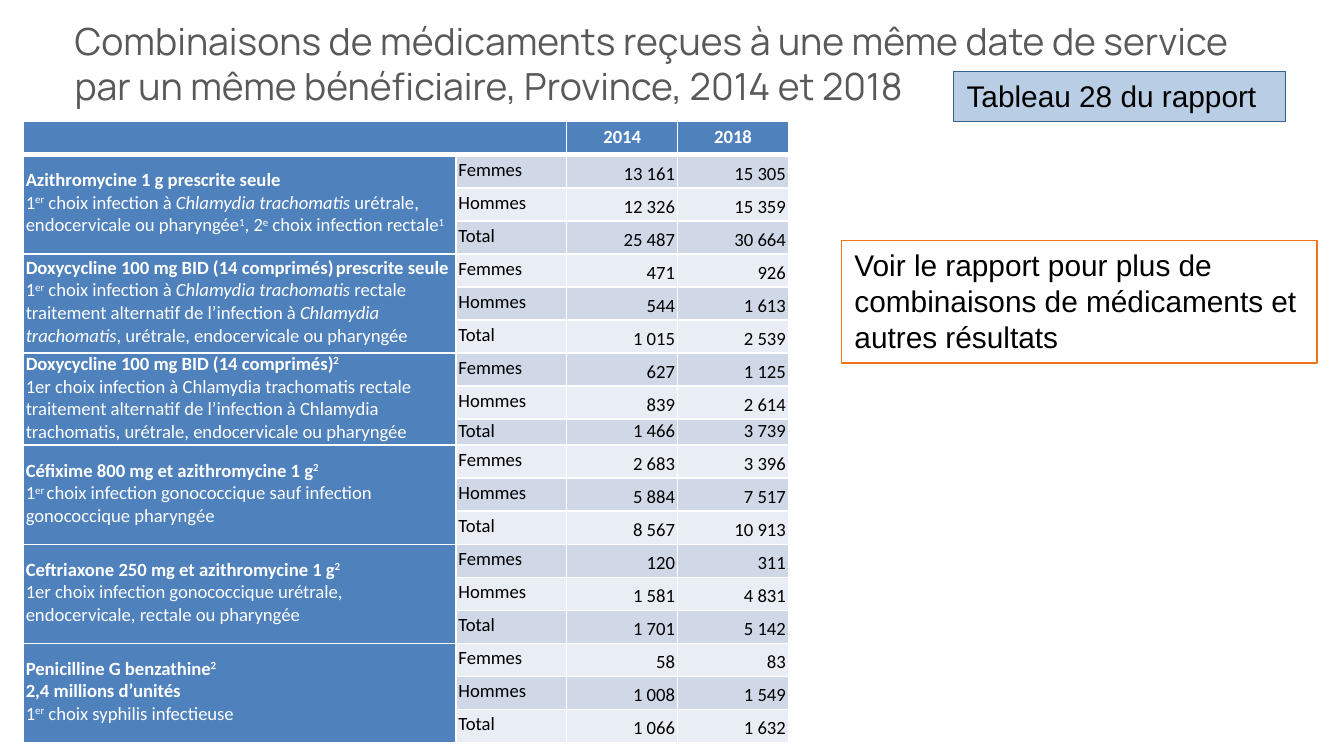
from lxml import etree
from pptx import Presentation, util as u
from pptx.dml.color import RGBColor
from pptx.enum import shapes, text
from pptx.oxml.ns import qn

WIDTH, HEIGHT = u.Inches(10), u.Inches(10 * 9 / 16)
BLUE, WHITE, BLACK = "4F81BD", "FFFFFF", "000000"
BANDS = ("D0D8E8", "E9EDF4")
GROUPS = ("Femmes", "Hommes", "Total")
YEARS = ("2014", "2018")
COLUMNS = (32.2, 8.25, 8.25, 8.25)
SHORT_ROW, SHORT_HEIGHT = 9, 3.4
FIXED_SPACE = chr(160)

TREATMENTS = [
    (["Azithromycine 1~g prescrite seule"],
     ["1^er^ choix infection à *Chlamydia trachomatis *urétrale, endocervicale ou "
      "pharyngée^1^, 2^e^ choix infection rectale^1^"],
     [(13161, 15305), (12326, 15359), (25487, 30664)]),
    (["Doxycycline 100~mg BID (14 comprimés)^ ^prescrite seule"],
     ["1^er^ choix infection à *Chlamydia trachomatis *rectale",
      "traitement alternatif de l’infection à *Chlamydia trachomatis*, urétrale, "
      "endocervicale ou pharyngée"],
     [(471, 926), (544, 1613), (1015, 2539)]),
    (["Doxycycline 100~mg BID (14 comprimés)^2^"],
     ["1er choix infection à Chlamydia trachomatis rectale",
      "traitement alternatif de l’infection à Chlamydia trachomatis, urétrale, "
      "endocervicale ou pharyngée"],
     [(627, 1125), (839, 2614), (1466, 3739)]),
    (["Céfixime 800~mg et azithromycine 1~g^2^"],
     ["1^er ^choix infection gonococcique sauf infection gonococcique pharyngée"],
     [(2683, 3396), (5884, 7517), (8567, 10913)]),
    (["Ceftriaxone 250~mg et azithromycine 1~g^2^"],
     ["1er choix infection gonococcique urétrale, endocervicale, rectale ou pharyngée"],
     [(120, 311), (1581, 4831), (1701, 5142)]),
    (["Penicilline G benzathine^2^", "2,4 millions d’unités"],
     ["1^er^ choix syphilis infectieuse"],
     [(58, 83), (1008, 1549), (1066, 1632)]),
]


def rgb(value):
    """Turn a hex string into a colour."""
    return RGBColor.from_string(value)


def across(share):
    """Length of a percentage of the slide's width."""
    return round(WIDTH * share / 100)


def down(share):
    """Length of a percentage of the slide's height."""
    return round(HEIGHT * share / 100)


def frame(box):
    """Turn a box in percentages into left, top, width and height."""
    left, top, width, height = box
    return across(left), down(top), across(width), down(height)


def write(holder, lines, size=10, font="Calibri", color=BLACK, bold_lines=0,
          align=text.PP_ALIGN.LEFT, after=0):
    """Write lines: ^ encloses superscripts, * italics, and ~ is a fixed space."""
    for index, line in enumerate(lines):
        paragraph = holder.paragraphs[0] if index == 0 else holder.add_paragraph()
        paragraph.alignment = align
        if after:
            paragraph.space_after = u.Pt(after)
        for raised, part in enumerate(line.replace("~", FIXED_SPACE).split("^")):
            for slanted, piece in enumerate(part.split("*")):
                if not piece:
                    continue
                run = paragraph.add_run()
                run.text = piece
                run.font.size, run.font.name = u.Pt(size), font
                run.font.color.rgb = rgb(color)
                run.font.bold = index < bold_lines
                run.font.italic = slanted % 2 == 1
                if raised % 2:
                    run.font._element.set("baseline", "30000")


def style_cell(cell, fill, lines=(), anchor=text.MSO_ANCHOR.MIDDLE, bottom=1, **look):
    """Give a table cell its borders, fill, margins and wording."""
    properties = cell._tc.get_or_add_tcPr()
    for side in "LRTB":
        points = bottom if side == "B" else 1
        line = etree.SubElement(properties, qn(f"a:ln{side}"), w=str(u.Pt(points)))
        solid = etree.SubElement(line, qn("a:solidFill"))
        etree.SubElement(solid, qn("a:srgbClr"), val=WHITE)
    cell.fill.solid()
    cell.fill.fore_color.rgb = rgb(fill)
    cell.margin_left = cell.margin_right = cell.margin_bottom = u.Inches(0.02)
    cell.margin_top = 0
    cell.vertical_anchor = anchor
    if lines:
        write(cell.text_frame, lines, **look)
    else:
        etree.SubElement(cell.text_frame.paragraphs[0]._p, qn("a:endParaRPr"), sz="1000")


def add_title(slide, box, wording):
    """Place and format the slide's title."""
    title = slide.shapes.title
    title.left, title.top, title.width, title.height = frame(box)
    holder = title.text_frame
    holder.word_wrap = True
    holder.auto_size = text.MSO_AUTO_SIZE.NONE
    holder.vertical_anchor = text.MSO_ANCHOR.MIDDLE
    write(holder, [wording], size=20, font="Manrope", color="595959")


def add_note(slide, box, wording, outline, fill=None):
    """Add a framed remark beside the table."""
    note = slide.shapes.add_shape(shapes.MSO_SHAPE.RECTANGLE, *frame(box))
    note.shadow.inherit = False
    if fill:
        note.fill.solid()
        note.fill.fore_color.rgb = rgb(fill)
    else:
        note.fill.background()
    note.line.color.rgb = rgb(outline)
    note.line.width = u.Pt(0.75)
    holder = note.text_frame
    holder.word_wrap = True
    holder.auto_size = text.MSO_AUTO_SIZE.SHAPE_TO_FIT_TEXT
    holder.vertical_anchor = text.MSO_ANCHOR.TOP
    write(holder, [wording], size=16, font="Arial")


def add_treatment_table(slide, box):
    """Add the table of treatments by group and year."""
    count = 1 + len(TREATMENTS) * len(GROUPS)
    table = slide.shapes.add_table(count, len(COLUMNS), *frame(box)).table
    table.first_row = table.horz_banding = False
    for column, share in zip(table.columns, COLUMNS):
        column.width = across(share)
    regular = (box[3] - SHORT_HEIGHT) / (count - 1)
    for index, row in enumerate(table.rows):
        row.height = down(SHORT_HEIGHT if index == SHORT_ROW else regular)

    for column, heading in enumerate(("", "") + YEARS):
        style_cell(table.cell(0, column), BLUE, [heading] if heading else (), bottom=3,
                   color=WHITE, bold_lines=1, align=text.PP_ALIGN.CENTER)
    table.cell(0, 0).merge(table.cell(0, 1))

    for order, (names, uses, counts) in enumerate(TREATMENTS):
        first = 1 + order * len(GROUPS)
        for offset, (group, values) in enumerate(zip(GROUPS, counts)):
            row = first + offset
            band = BANDS[(row - 1) % 2]
            style_cell(table.cell(row, 0), BLUE, names + uses if offset == 0 else (),
                       color=WHITE, bold_lines=len(names))
            style_cell(table.cell(row, 1), band, [group])
            for column, value in enumerate(values, 2):
                style_cell(table.cell(row, column), band, [f"{value:,}".replace(",", "~")],
                           anchor=text.MSO_ANCHOR.BOTTOM, align=text.PP_ALIGN.RIGHT, after=3)
        table.cell(first, 0).merge(table.cell(first + len(GROUPS) - 1, 0))


def main():
    """Build and save the slide."""
    deck = Presentation()
    deck.slide_width, deck.slide_height = WIDTH, HEIGHT
    slide = deck.slides.add_slide(deck.slide_layouts[5])
    add_title(slide, (4.55, 0, 90, 16.7),
              "Combinaisons de médicaments reçues à une même date de service "
              "par un même bénéficiaire, Province, 2014 et 2018")
    add_note(slide, (70.94, 9.45, 24.7, 6.6), "Tableau 28 du rapport", "376092", "B9CDE5")
    add_treatment_table(slide, (1.72, 16.1, sum(COLUMNS), 82.1))
    add_note(slide, (62.6, 31.8, 35.4, 16.2),
             "Voir le rapport pour plus de combinaisons de médicaments et autres résultats",
             "EF7516")
    deck.save("out.pptx")


if __name__ == "__main__":
    main()
